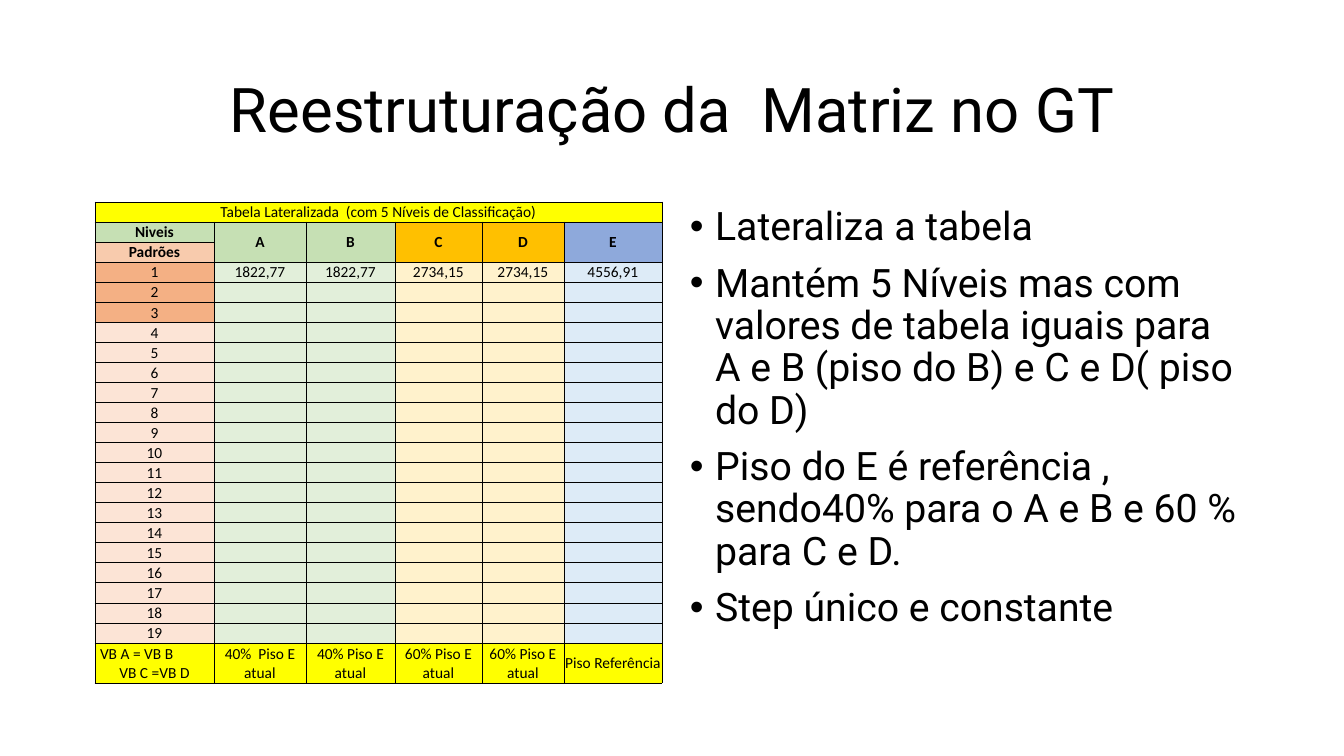
from dataclasses import dataclass

import lxml.etree
import pptx
import pptx.dml.color
import pptx.enum.text
import pptx.oxml.ns
import pptx.util

ALIGN = pptx.enum.text.PP_ALIGN
MIDDLE = pptx.enum.text.MSO_ANCHOR.MIDDLE
qn = pptx.oxml.ns.qn


@dataclass(frozen=True)
class Theme:
    title_font: str = "Roboto"
    table_font: str = "Calibri"
    title_size: int = 44
    bullet_size: int = 28
    table_size: int = 11
    ink: str = "000000"
    highlight: str = "FFFF00"
    levels_label: str = "C6E0B4"
    steps_label: str = "F8CBAD"
    first_steps: str = "F4B084"
    later_steps: str = "FCE4D6"
    level_heads: tuple = ("C6E0B4", "C6E0B4", "FFC000", "FFC000", "8EA9DB")
    level_bodies: tuple = ("E2EFDA", "E2EFDA", "FFF2CC", "FFF2CC", "DDEBF7")


THEME = Theme()

TITLE = "Reestruturação da  Matriz no GT"
BULLETS = [
    "Lateraliza a tabela",
    "Mantém 5 Níveis mas com valores de tabela iguais para A e B (piso do B) e C e D( piso do D)",
    "Piso do E é referência , sendo40% para o A e B e 60 % para C e D.",
    "Step único e constante",
]
CAPTION = "Tabela Lateralizada  (com 5 Níveis de Classificação)"
LEVELS = "ABCDE"
FLOORS = ["1822,77", "1822,77", "2734,15", "2734,15", "4556,91"]
RULES = ["VB A = VB B\nVB C =VB D", "40%  Piso E atual", "40% Piso E atual",
         "60% Piso E atual", "60% Piso E atual", "Piso Referência"]
STEPS = 19
COLUMN_WIDTHS = [119, 92, 89, 87, 82, 98]
ROW_HEIGHTS = [20] * (3 + STEPS) + [40]


def px(length):
    return pptx.util.Emu(round(length * 914400 / 100.8))


def rgb(colour):
    return pptx.dml.color.RGBColor.from_string(colour)


def format_runs(paragraph, font, size, bold=False):
    for run in paragraph.runs:
        run.font.name = font
        run.font.size = pptx.util.Pt(size)
        run.font.bold = bold
        run.font.color.rgb = rgb(THEME.ink)


def add_borders(cell):
    properties = cell._tc.get_or_add_tcPr()
    for position, side in enumerate(("a:lnL", "a:lnR", "a:lnT", "a:lnB")):
        border = lxml.etree.Element(qn(side), w=str(pptx.util.Pt(0.5)))
        fill = lxml.etree.SubElement(border, qn("a:solidFill"))
        lxml.etree.SubElement(fill, qn("a:srgbClr"), val=THEME.ink)
        properties.insert(position, border)


def fill_cell(cell, text, colour, bold=False):
    cell.margin_left = cell.margin_right = cell.margin_top = px(1)
    cell.margin_bottom = 0
    cell.vertical_anchor = MIDDLE
    cell.fill.solid()
    cell.fill.fore_color.rgb = rgb(colour)
    add_borders(cell)
    cell.text_frame.text = text
    for paragraph in cell.text_frame.paragraphs:
        paragraph.alignment = ALIGN.CENTER
        format_runs(paragraph, THEME.table_font, THEME.table_size, bold)
        if not paragraph.runs:
            # An empty cell needs the small type size to keep its row low
            lxml.etree.SubElement(paragraph._p, qn("a:endParaRPr"),
                                  sz=str(THEME.table_size * 100))


def matrix_rows():
    """Yield, row by row, the texts, the fills and whether the row is bold."""
    heads, bodies = list(THEME.level_heads), list(THEME.level_bodies)
    blanks = [""] * len(LEVELS)
    yield [CAPTION] + blanks, [THEME.highlight] * 6, False
    yield ["Niveis", *LEVELS], [THEME.levels_label] + heads, True
    yield ["Padrões"] + blanks, [THEME.steps_label] + heads, True
    for step in range(1, STEPS + 1):
        step_fill = THEME.first_steps if step <= 3 else THEME.later_steps
        floors = FLOORS if step == 1 else blanks
        yield [str(step)] + floors, [step_fill] + bodies, False
    yield RULES, [THEME.highlight] * 6, False


def add_matrix(slide, left, top):
    frame = slide.shapes.add_table(
        len(ROW_HEIGHTS), len(COLUMN_WIDTHS), px(left), px(top),
        px(sum(COLUMN_WIDTHS)), px(sum(ROW_HEIGHTS)))
    matrix = frame.table
    matrix.first_row = matrix.horz_banding = False
    for column, width in zip(matrix.columns, COLUMN_WIDTHS):
        column.width = px(width)
    for row, height in zip(matrix.rows, ROW_HEIGHTS):
        row.height = px(height)

    for row, (texts, fills, bold) in zip(matrix.rows, matrix_rows()):
        for cell, text, colour in zip(row.cells, texts, fills):
            fill_cell(cell, text, colour, bold)

    # Caption spans all columns, each level letter spans two rows
    matrix.cell(0, 0).merge(matrix.cell(0, len(LEVELS)))
    for column in range(1, len(LEVELS) + 1):
        matrix.cell(1, column).merge(matrix.cell(2, column))

    # First pay rule sits at the left of its cell
    first_rule = matrix.cell(len(ROW_HEIGHTS) - 1, 0).text_frame.paragraphs[0]
    first_rule.alignment = ALIGN.LEFT
    first_rule._p.get_or_add_pPr().set("marL", str(px(4)))


def add_title(slide, left, top, width, height):
    title = slide.shapes.title
    title.left, title.top = px(left), px(top)
    title.width, title.height = px(width), px(height)
    heading = title.text_frame
    heading.text = TITLE
    heading.word_wrap = True
    heading.auto_size = pptx.enum.text.MSO_AUTO_SIZE.NONE
    heading.vertical_anchor = MIDDLE
    heading.paragraphs[0].alignment = ALIGN.CENTER
    heading.paragraphs[0].line_spacing = 0.9
    format_runs(heading.paragraphs[0], THEME.title_font, THEME.title_size)


def add_bullets(slide, left, top, width, height):
    box = slide.shapes.add_textbox(px(left), px(top), px(width), px(height))
    points = box.text_frame
    points.word_wrap = True
    points.text = "\n".join(BULLETS)
    indent = pptx.util.Inches(0.25)
    for point in points.paragraphs:
        point.alignment = ALIGN.LEFT
        point.line_spacing = 0.9
        point.space_before = pptx.util.Pt(10)
        format_runs(point, THEME.title_font, THEME.bullet_size)
        properties = point._p.get_or_add_pPr()
        properties.set("marL", str(indent))
        properties.set("indent", str(-indent))
        lxml.etree.SubElement(properties, qn("a:buFont"), typeface="Arial")
        lxml.etree.SubElement(properties, qn("a:buChar"), char="•")


def main():
    deck = pptx.Presentation()
    deck.slide_width, deck.slide_height = px(1344), px(756)
    slide = deck.slides.add_slide(deck.slide_layouts[5])
    add_title(slide, 93, 40, 1159, 146)
    add_matrix(slide, 95, 202)
    add_bullets(slide, 680, 202, 572, 480)
    deck.save("out.pptx")


if __name__ == "__main__":
    main()
